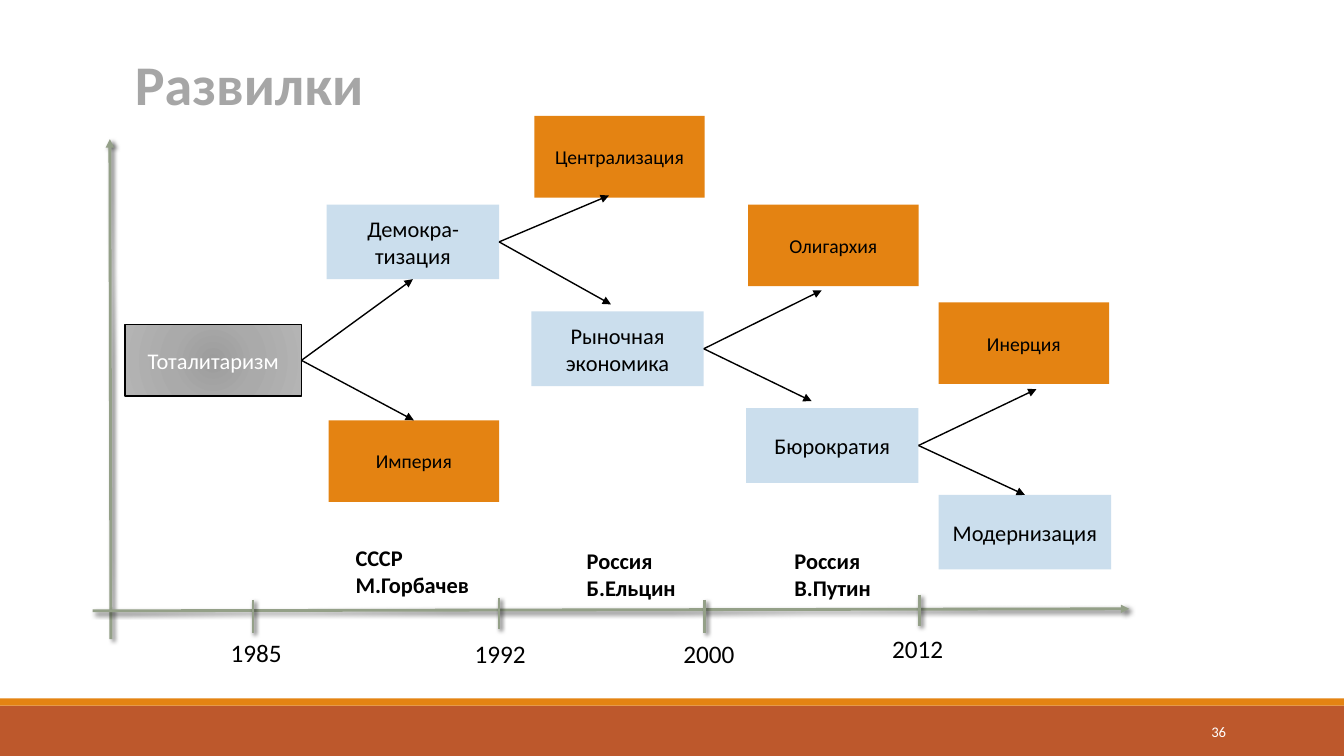
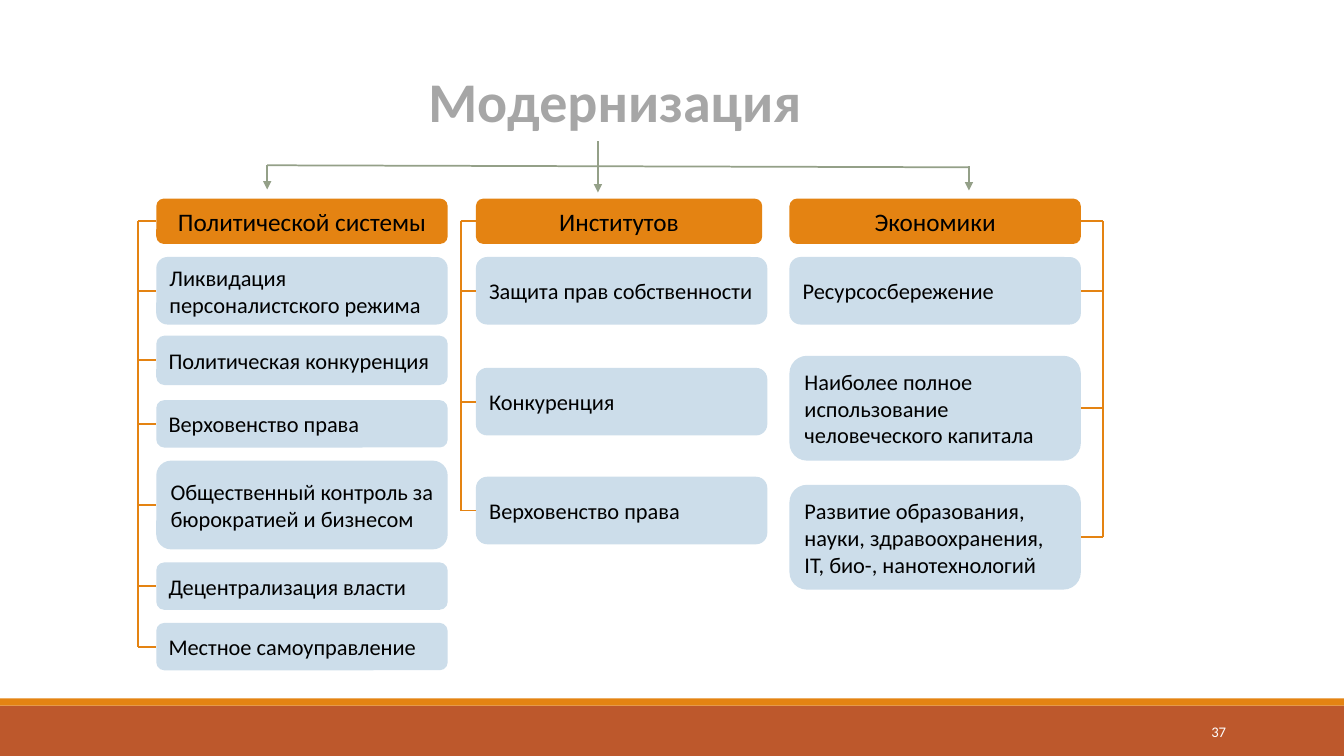
from lxml.etree import SubElement
from pptx import Presentation
from pptx.dml.color import RGBColor
from pptx.enum.shapes import MSO_CONNECTOR, MSO_SHAPE
from pptx.enum.text import MSO_ANCHOR, MSO_AUTO_SIZE, PP_ALIGN
from pptx.oxml import parse_xml
from pptx.oxml.ns import nsdecls, qn
from pptx.util import Inches, Pt

COLOURS = {
    "band": "BD582C",
    "orange": "E48312",
    "pale": "CBDEED",
    "mist": "CCDDEA",
    "sage": "94A088",
    "title": "A6A6A6",
    "black": "000000",
    "white": "FFFFFF",
}

FONTS = {
    "title": {"size": Pt(40), "bold": True},
    "large": {"size": Pt(18)},
    "normal": {"size": Pt(16)},
    "strong": {"size": Pt(16), "bold": True},
    "small": {"size": Pt(14)},
    "number": {"size": Pt(10.5)},
}

BOX_KINDS = {
    "chosen": {"width": 1.71, "height": 0.74, "fill": "pale", "font": "normal"},
    "missed": {"width": 1.69, "height": 0.81, "fill": "orange", "font": "small"},
}

BOXES = [
    ("Демокра-тизация", "chosen", 3.24, 2.03),
    ("Империя", "missed", 3.26, 4.17),
    ("Рыночная экономика", "chosen", 5.27, 3.09),
    ("Централизация", "missed", 5.3, 1.15),
    ("Олигархия", "missed", 7.42, 2.03),
    ("Бюрократия", "chosen", 7.4, 4.05),
    ("Инерция", "missed", 9.31, 3),
    ("Модернизация", "chosen", 9.31, 4.91),
]

JOINED_FORKS = [
    ("Тоталитаризм", "Демокра-тизация", 2),
    ("Тоталитаризм", "Империя", 0),
    ("Бюрократия", "Модернизация", 0),
]

FREE_FORKS = [
    ("Демокра-тизация", (6.04, 1.94)),
    ("Демокра-тизация", (6.06, 3.02)),
    ("Рыночная экономика", (8.15, 2.88)),
    ("Рыночная экономика", (8.05, 3.98)),
    ("Бюрократия", (10.28, 3.86)),
]

YEARS = [
    ("1985", 2.19, 6.27, 2.51, 5.95, 6.28),
    ("1992", 4.61, 6.28, 4.95, 5.93, 6.24),
    ("2000", 6.68, 6.28, 6.99, 5.95, 6.28),
    ("2012", 8.75, 6.23, 9.12, 5.9, 6.21),
]

ERAS = [
    ("СССР\nМ.Горбачев", 3.43, 5.35, 1.83),
    ("Россия\nБ.Ельцин", 5.72, 5.38, 1.45),
    ("Россия\nВ.Путин", 7.78, 5.38, 1.45),
]

LEFT_SIDE, RIGHT_SIDE = 1, 3
COLUMN_WIDTH = 2.89
HEADER_TOP, HEADER_HEIGHT = 1.97, 0.45

COLUMNS = [
    ("Политической системы", 1.55, 2.89, 1.37, LEFT_SIDE, [
        ("Ликвидация персоналистского режима", 2.55, 0.67),
        ("Политическая конкуренция", 3.33, 0.49),
        ("Верховенство права", 3.97, 0.47),
        ("Общественный контроль за бюрократией и бизнесом", 4.57, 0.88),
        ("Децентрализация власти", 5.58, 0.47),
        ("Местное самоуправление", 6.18, 0.47),
    ]),
    ("Институтов", 4.72, 2.84, 4.57, LEFT_SIDE, [
        ("Защита прав собственности", 2.55, 0.67),
        ("Конкуренция", 3.65, 0.67),
        ("Верховенство права", 4.73, 0.67),
    ]),
    ("Экономики", 7.83, 2.89, 10.94, RIGHT_SIDE, [
        ("Ресурсосбережение", 2.55, 0.67),
        ("Наиболее полное использование человеческого капитала", 3.53, 1.04),
        ("Развитие образования, науки, здравоохранения, IT, био-, нанотехнологий", 4.81, 1.04),
    ]),
]


class Deck:
    font_name = "Calibri"

    def __init__(self):
        self.presentation = Presentation()
        self.presentation.slide_width = Inches(13.33)
        self.presentation.slide_height = Inches(7.5)
        self.slide = None

    def colour(self, name):
        return RGBColor.from_string(COLOURS[name])

    def new_slide(self, number):
        self.slide = self.presentation.slides.add_slide(self.presentation.slide_layouts[6])
        self.box("", 0, 7, 13.33, 0.5, "band")
        self.box("", 0, 6.93, 13.33, 0.07, "orange")
        self.text(number, 10.83, 7.06, 1.43, 0.4, "number", "white",
                  PP_ALIGN.RIGHT, MSO_ANCHOR.MIDDLE, MSO_AUTO_SIZE.NONE)

    def set_text(self, shape, text, font, colour, align, frame_format):
        for name, value in frame_format.items():
            setattr(shape.text_frame, name, value)
        shape.text_frame.text = text
        for paragraph in shape.text_frame.paragraphs:
            paragraph.alignment = align
            for run in paragraph.runs:
                for name, value in {"name": self.font_name, **FONTS[font]}.items():
                    setattr(run.font, name, value)
                run.font.color.rgb = self.colour(colour)

    def text(self, text, left, top, width, height, font, colour="black",
             align=PP_ALIGN.LEFT, anchor=MSO_ANCHOR.TOP,
             auto_size=MSO_AUTO_SIZE.SHAPE_TO_FIT_TEXT):
        shape = self.slide.shapes.add_textbox(
            Inches(left), Inches(top), Inches(width), Inches(height))
        self.set_text(shape, text, font, colour, align, {
            "word_wrap": True, "vertical_anchor": anchor, "auto_size": auto_size})

    def title(self, text, left, top, width):
        self.text(text, left, top, width, 0.77, "title", "title")

    def box(self, text, left, top, width, height, fill, font="normal", colour="black",
            align=PP_ALIGN.CENTER, preset=MSO_SHAPE.RECTANGLE):
        shape = self.slide.shapes.add_shape(
            preset, Inches(left), Inches(top), Inches(width), Inches(height))
        shape.shadow.inherit = False
        shape.fill.solid()
        shape.fill.fore_color.rgb = self.colour(fill)
        shape.line.fill.background()
        if text:
            self.set_text(shape, text, font, colour, align, {
                "word_wrap": True, "vertical_anchor": MSO_ANCHOR.MIDDLE})
        return shape

    def gradient_box(self, text, left, top, width, height):
        shape = self.box(text, left, top, width, height, "title", colour="white")
        shape.line.color.rgb = self.colour("black")
        shape.line.width = Pt(1)
        stops = "".join(
            f'<a:gs pos="{position}"><a:srgbClr val="{colour}"/></a:gs>'
            for position, colour in [(0, "9C9C9C"), (45000, "AAAAAA"), (100000, "B4B4B4")])
        gradient = parse_xml(
            f'<a:gradFill {nsdecls("a")}><a:gsLst>{stops}</a:gsLst><a:path path="circle">'
            '<a:fillToRect l="100000" t="100000" r="100000" b="100000"/></a:path></a:gradFill>')
        properties = shape.element.spPr
        solid = properties.find(qn("a:solidFill"))
        solid.addprevious(gradient)
        properties.remove(solid)
        return shape

    def line(self, start, end, colour, width, arrow=False, shadow=False,
             begin_join=None, end_join=None):
        connector = self.slide.shapes.add_connector(
            MSO_CONNECTOR.STRAIGHT, *[Inches(value) for value in (*start, *end)])
        if begin_join:
            connector.begin_connect(*begin_join)
        if end_join:
            connector.end_connect(*end_join)
        connector.line.color.rgb = self.colour(colour)
        connector.line.width = Pt(width)
        properties = connector.element.spPr
        if arrow:
            SubElement(properties.find(qn("a:ln")), qn("a:tailEnd"), type="triangle")
        effects = SubElement(properties, qn("a:effectLst"))
        if shadow:
            outer = SubElement(effects, qn("a:outerShdw"), blurRad=str(Pt(3)),
                               dist=str(Pt(2)), dir="2700000", rotWithShape="0")
            shade = SubElement(outer, qn("a:srgbClr"), val=COLOURS["black"])
            SubElement(shade, qn("a:alpha"), val="60000")

    def axis(self, start, end, arrow=False):
        self.line(start, end, "sage", 2, arrow, shadow=True)

    def fork(self, source, end, end_join=None):
        self.line((0, 0), end, "black", 1, True, begin_join=(source, RIGHT_SIDE),
                  end_join=end_join)

    def column(self, header, left, header_width, spine, side, rows):
        rounded = MSO_SHAPE.ROUNDED_RECTANGLE
        shapes = [self.box(header, left, HEADER_TOP, header_width, HEADER_HEIGHT,
                           "orange", "large", preset=rounded)]
        shapes += [self.box(text, left, top, COLUMN_WIDTH, height, "mist",
                            align=PP_ALIGN.LEFT, preset=rounded)
                   for text, top, height in rows]
        middles = [(shape.top + shape.height / 2) / Inches(1) for shape in shapes]
        self.line((spine, middles[0]), (spine, middles[-1]), "orange", 1.25)
        for shape, middle in zip(shapes, middles):
            self.line((spine, middle), (left, middle), "orange", 1.25,
                      end_join=(shape, side))


def build_forks(deck):
    deck.new_slide("36")
    deck.axis((1.1, 6.34), (1.09, 1.38), arrow=True)
    deck.axis((0.92, 6.06), (11.2, 6.04), arrow=True)
    for year, left, top, tick, tick_top, tick_bottom in YEARS:
        deck.axis((tick, tick_top), (tick, tick_bottom))
        deck.text(year, left, top, 0.74, 0.4, "large")
    shapes = {"Тоталитаризм": deck.gradient_box("Тоталитаризм", 1.24, 3.22, 1.75, 0.71)}
    for text, kind, left, top in BOXES:
        shapes[text] = deck.box(text, left, top, **BOX_KINDS[kind])
    for source, target, side in JOINED_FORKS:
        deck.fork(shapes[source], (0, 0), (shapes[target], side))
    for source, end in FREE_FORKS:
        deck.fork(shapes[source], end)
    for text, left, top, width in ERAS:
        deck.text(text, left, top, width, 0.64, "strong")
    deck.title("Развилки", 1.24, 0.44, 3.37)


def build_modernisation(deck):
    deck.new_slide("37")
    deck.title("Модернизация", 4.15, 0.61, 4.26)
    deck.line((2.65, 1.64), (9.61, 1.66), "sage", 1.25)
    for centre, top, bottom in [(2.65, 1.64, 1.88), (5.93, 1.4, 1.91), (9.61, 1.65, 1.89)]:
        deck.line((centre, top), (centre, bottom), "sage", 1.25, arrow=True)
    for column in COLUMNS:
        deck.column(*column)


def main():
    deck = Deck()
    build_forks(deck)
    build_modernisation(deck)
    deck.presentation.save("out.pptx")


if __name__ == "__main__":
    main()
